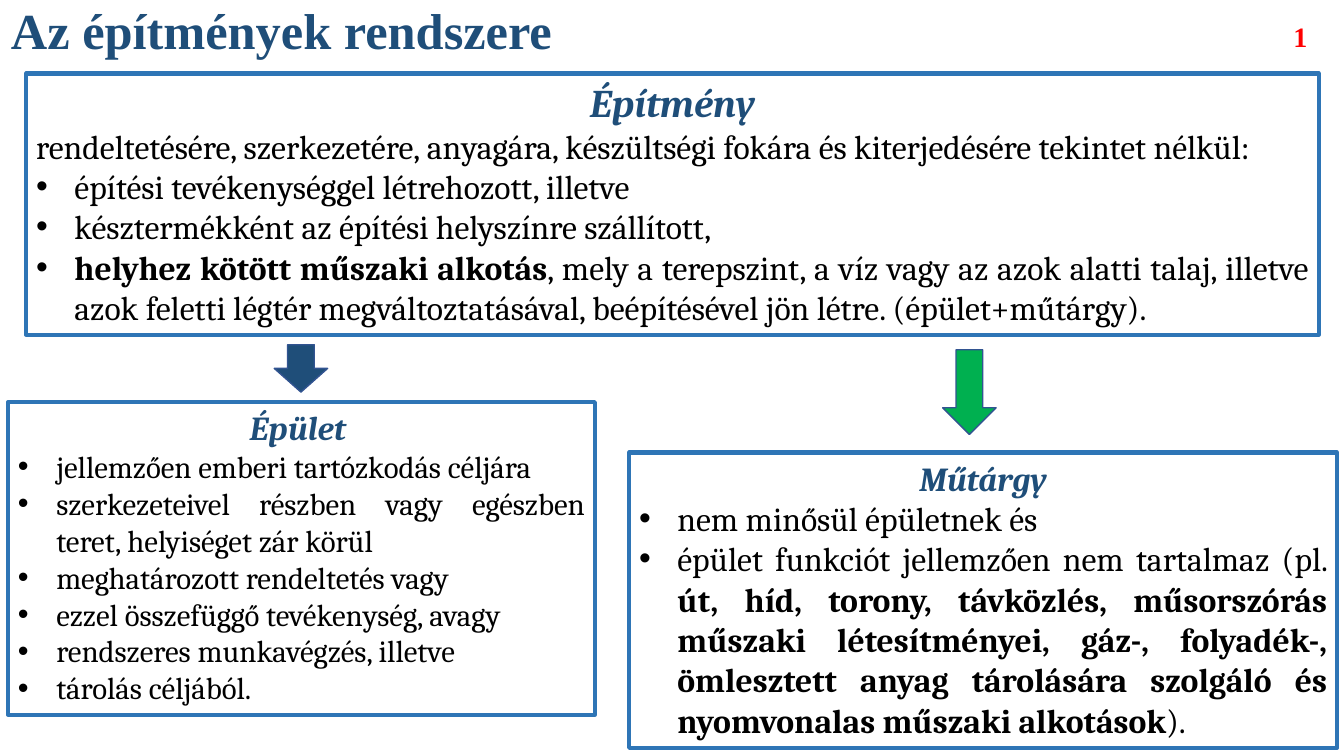
"""Build a slide that defines structures and splits them into buildings and engineering works."""
import pptx
import pptx.dml.color
import pptx.enum.shapes
import pptx.enum.text
import pptx.oxml.ns
import pptx.util
from lxml import etree

Inches = pptx.util.Inches
Pt = pptx.util.Pt
RGBColor = pptx.dml.color.RGBColor
Shape = pptx.enum.shapes.MSO_SHAPE
Align = pptx.enum.text.PP_ALIGN
Anchor = pptx.enum.text.MSO_ANCHOR
AutoSize = pptx.enum.text.MSO_AUTO_SIZE

NAVY = RGBColor(0x1F, 0x4E, 0x79)
BORDER_BLUE = RGBColor(0x2E, 0x75, 0xB6)
ARROW_OUTLINE = RGBColor(0x32, 0x54, 0x91)
GREEN = RGBColor(0x00, 0xB0, 0x50)
RED = RGBColor(0xFF, 0x00, 0x00)
BLACK = RGBColor(0x00, 0x00, 0x00)
BODY_FONT = "Cambria"
TITLE_FONT = "Times New Roman"
BOLD_MARK = "**"
BULLET_INDENT = 0.38

TITLE = "Az építmények rendszere"
PAGE_NUMBER = "1"
DEFINITIONS = [
    {
        "box": (0.26, 0.73, 12.82, 2.59),
        "heading": "Építmény",
        "heading_size": 28,
        "body_size": 24,
        "intro": "rendeltetésére, szerkezetére, anyagára, készültségi fokára és kiterjedésére tekintet nélkül:",
        "bullets": [
            "építési tevékenységgel létrehozott, illetve",
            "késztermékként az építési helyszínre szállított,",
            "**helyhez kötött műszaki alkotás**, mely a terepszint, a víz vagy az azok alatti talaj, "
            "illetve azok feletti légtér megváltoztatásával, beépítésével jön létre. (épület+műtárgy).",
        ],
    },
    {
        "box": (0.08, 3.99, 5.82, 3.1),
        "heading": "Épület ",
        "heading_size": 24,
        "body_size": 22,
        "intro": "",
        "bullets": [
            "jellemzően emberi tartózkodás céljára",
            "szerkezeteivel részben vagy egészben teret, helyiséget zár körül",
            "meghatározott rendeltetés vagy",
            "ezzel összefüggő tevékenység, avagy",
            "rendszeres munkavégzés, illetve",
            "tárolás céljából.",
        ],
    },
    {
        "box": (6.24, 4.49, 7.02, 2.93),
        "heading": "Műtárgy",
        "heading_size": 24,
        "body_size": 24,
        "intro": "",
        "bullets": [
            "nem minősül épületnek és",
            "épület funkciót jellemzően nem tartalmaz (pl. **út, híd, torony, távközlés, műsorszórás "
            "műszaki létesítményei, gáz-, folyadék-, ömlesztett anyag tárolására szolgáló és "
            "nyomvonalas műszaki alkotások**).",
        ],
    },
]
ARROWS = [
    ((2.72, 3.42, 0.53, 0.47), NAVY),
    ((9.35, 3.47, 0.53, 0.84), GREEN),
]


def add_bullet(paragraph):
    """Give the paragraph a round bullet with a hanging indent."""
    properties = paragraph._p.get_or_add_pPr()
    properties.set("marL", str(Inches(BULLET_INDENT)))
    properties.set("indent", str(-Inches(BULLET_INDENT)))
    etree.SubElement(properties, pptx.oxml.ns.qn("a:buFont"), typeface="Arial")
    etree.SubElement(properties, pptx.oxml.ns.qn("a:buChar"), char="•")


def write_paragraph(frame, text, *, size, color=BLACK, font=BODY_FONT, bold=False,
                    italic=False, align=Align.LEFT, bullet=False, line_spacing=None):
    """Append formatted text, switching bold at each mark."""
    first = frame.paragraphs[0]
    paragraph = frame.add_paragraph() if first.runs else first
    if bullet:
        add_bullet(paragraph)
    paragraph.alignment = align
    paragraph.line_spacing = line_spacing
    for index, part in enumerate(text.split(BOLD_MARK)):
        if part:
            run = paragraph.add_run()
            run.text = part
            run.font.name = font
            run.font.size = Pt(size)
            run.font.bold = bold or index % 2 == 1
            run.font.italic = italic
            run.font.color.rgb = color


def add_outlined_shape(slide, kind, box, line_color, line_width):
    """Add an unfilled preset shape with a plain outline."""
    shape = slide.shapes.add_shape(kind, *map(Inches, box))
    shape.shadow.inherit = False
    shape.fill.background()
    shape.line.color.rgb = line_color
    shape.line.width = Pt(line_width)
    return shape


def add_definition(slide, definition):
    """Add a bordered box with a heading, an optional intro and bullets."""
    shape = add_outlined_shape(slide, Shape.RECTANGLE, definition["box"], BORDER_BLUE, 3)
    frame = shape.text_frame
    frame.word_wrap = True
    frame.auto_size = AutoSize.SHAPE_TO_FIT_TEXT
    frame.vertical_anchor = Anchor.TOP
    write_paragraph(frame, definition["heading"], size=definition["heading_size"],
                    color=NAVY, bold=True, italic=True, align=Align.CENTER)
    body = {"size": definition["body_size"], "align": Align.JUSTIFY}
    if definition["intro"]:
        write_paragraph(frame, definition["intro"], **body)
    for bullet in definition["bullets"]:
        write_paragraph(frame, bullet, bullet=True, **body)


def main():
    """Build and save the slide."""
    presentation = pptx.Presentation()
    presentation.slide_width = Inches(13.33)
    presentation.slide_height = Inches(7.5)
    slide = presentation.slides.add_slide(presentation.slide_layouts[6])

    title = slide.shapes.add_textbox(Inches(0.01), Inches(0), Inches(8.11), Inches(0.65))
    title.text_frame.word_wrap = True
    title.text_frame.vertical_anchor = Anchor.BOTTOM
    write_paragraph(title.text_frame, TITLE, size=36, color=NAVY, font=TITLE_FONT,
                    bold=True, line_spacing=0.9)

    for definition in DEFINITIONS:
        add_definition(slide, definition)

    for box, color in ARROWS:
        arrow = add_outlined_shape(slide, Shape.DOWN_ARROW, box, ARROW_OUTLINE, 1)
        arrow.fill.solid()
        arrow.fill.fore_color.rgb = color

    number = slide.shapes.add_textbox(Inches(12.73), Inches(0.14), Inches(0.34), Inches(0.44))
    number.text_frame.word_wrap = False
    number.text_frame.auto_size = AutoSize.SHAPE_TO_FIT_TEXT
    write_paragraph(number.text_frame, PAGE_NUMBER, size=20, color=RED, font=TITLE_FONT, bold=True)

    presentation.save("out.pptx")


if __name__ == "__main__":
    main()
